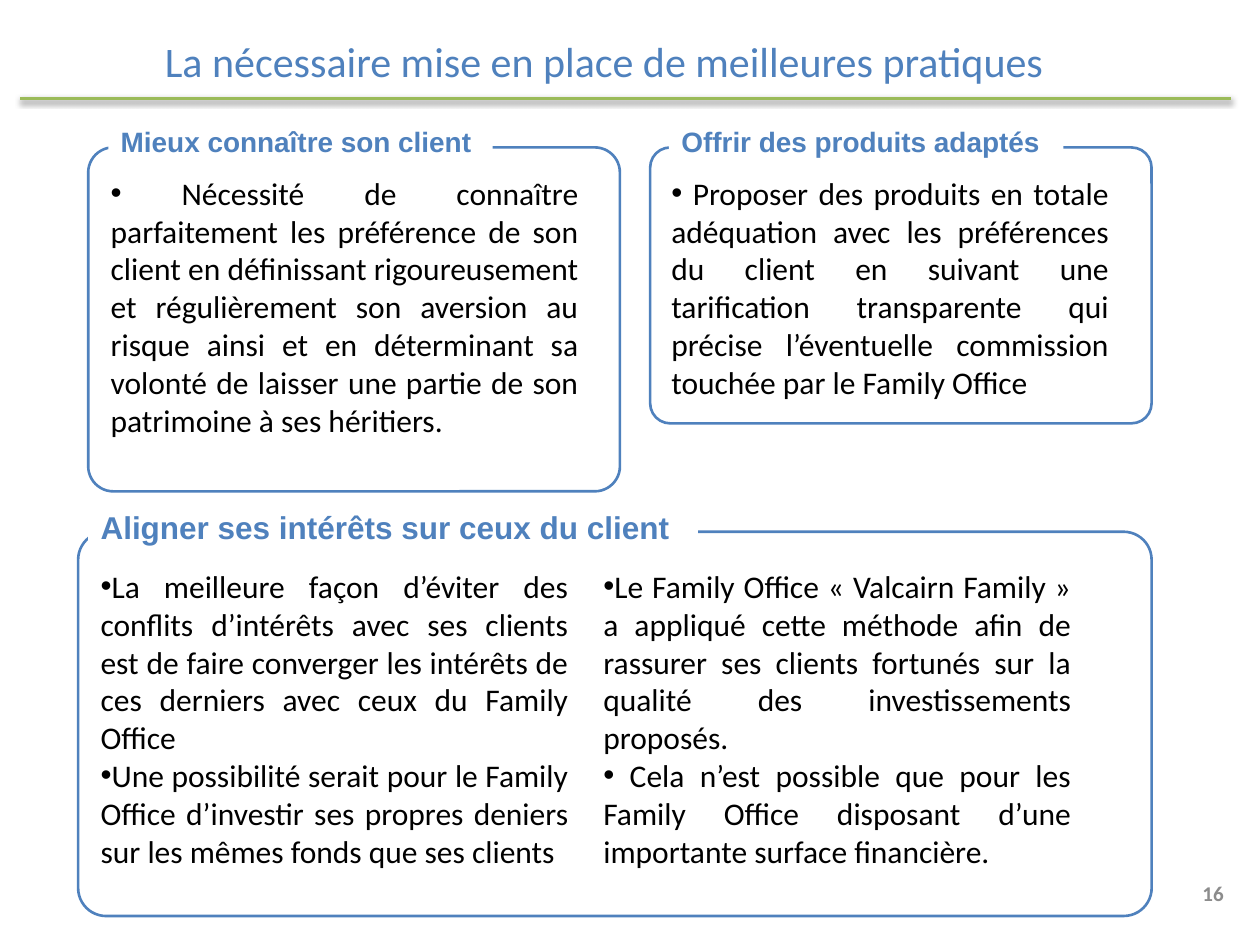
from lxml.etree import SubElement
from pptx import Presentation
from pptx.dml.color import RGBColor
from pptx.enum.shapes import MSO_CONNECTOR, MSO_SHAPE
from pptx.enum.text import MSO_ANCHOR, PP_ALIGN
from pptx.oxml.ns import qn
from pptx.util import Inches, Pt

BLUE, GREEN, GREY, BLACK, WHITE = "4F81BD", "9BBB59", "8C8C8C", "000000", "FFFFFF"

KNOW_CLIENT = [
    " Nécessité de connaître parfaitement les préférence de son client en définissant "
    "rigoureusement et régulièrement son aversion au risque ainsi et en déterminant sa "
    "volonté de laisser une partie de son patrimoine à ses héritiers."
]
ADAPTED_PRODUCTS = [
    " Proposer des produits en totale adéquation avec les préférences du client en suivant "
    "une tarification transparente qui précise l’éventuelle commission touchée par le "
    "Family Office"
]
ALIGN_INTERESTS = [
    "La meilleure façon d’éviter des conflits d’intérêts avec ses clients est de faire "
    "converger les intérêts de ces derniers avec ceux du Family Office",
    "Une possibilité serait pour le Family Office d’investir ses propres deniers sur les "
    "mêmes fonds que ses clients",
]
FAMILY_EXAMPLE = [
    "Le Family Office « Valcairn Family » a appliqué cette méthode afin de rassurer ses "
    "clients fortunés sur la qualité des investissements proposés.",
    " Cela n’est possible que pour les Family Office disposant d’une importante surface "
    "financière.",
]


def color(value):
    return RGBColor.from_string(value)


def inches(box):
    return [Inches(length) for length in box]


def write(shape, lines, size, ink, font="Calibri", bold=False,
          align=PP_ALIGN.LEFT, anchor=MSO_ANCHOR.TOP, wrap=True):
    frame = shape.text_frame
    frame.text = "\n".join(lines)
    frame.word_wrap = wrap
    frame.vertical_anchor = anchor
    for paragraph in frame.paragraphs:
        paragraph.alignment = align
        for run in paragraph.runs:
            run.font.name = font
            run.font.size = Pt(size)
            run.font.bold = bold
            run.font.color.rgb = color(ink)


def add_text(slide, box, lines, size, ink, **style):
    shape = slide.shapes.add_textbox(*inches(box))
    write(shape, lines, size, ink, **style)
    return shape


def add_bullets(slide, box, lines):
    shape = add_text(slide, box, lines, 18, BLACK, align=PP_ALIGN.JUSTIFY)
    for paragraph in shape.text_frame.paragraphs:
        properties = paragraph._p.get_or_add_pPr()
        SubElement(properties, qn("a:buFont"), typeface="Arial")
        SubElement(properties, qn("a:buChar"), char="•")


def add_frame(slide, box):
    frame = slide.shapes.add_shape(MSO_SHAPE.ROUNDED_RECTANGLE, *inches(box))
    frame.adjustments[0] = 0.073
    frame.shadow.inherit = False
    frame.fill.background()
    frame.line.color.rgb = color(BLUE)
    frame.line.width = Pt(1.5)


def add_heading(slide, box, text, size):
    """Add a white label that interrupts the top edge of its frame."""
    heading = slide.shapes.add_shape(MSO_SHAPE.RECTANGLE, *inches(box))
    heading.shadow.inherit = False
    heading.fill.solid()
    heading.fill.fore_color.rgb = color(WHITE)
    heading.line.fill.background()
    write(heading, [text], size, BLUE, font="Arial", bold=True)


def add_title_rule(slide):
    rule = slide.shapes.add_connector(
        MSO_CONNECTOR.STRAIGHT, *inches((0.16, 0.78, 9.77, 0.78)))
    rule.line.color.rgb = color(GREEN)
    rule.line.width = Pt(2)
    effects = SubElement(rule._element.spPr, qn("a:effectLst"))
    shadow = SubElement(effects, qn("a:outerShdw"), blurRad=str(Pt(3.1)),
                        dist=str(Pt(1.6)), dir="5400000", rotWithShape="0")
    shade = SubElement(shadow, qn("a:srgbClr"), val=BLACK)
    SubElement(shade, qn("a:alpha"), val="38000")


def main():
    presentation = Presentation()
    presentation.slide_width, presentation.slide_height = Inches(10), Inches(7.5)
    slide = presentation.slides.add_slide(presentation.slide_layouts[6])

    add_text(slide, (9.14, 6.8, 0.67, 0.57), ["16"], 12, GREY, bold=True,
             align=PP_ALIGN.RIGHT, anchor=MSO_ANCHOR.MIDDLE)
    add_text(slide, (1.17, 0.23, 7.25, 0.5),
             ["La nécessaire mise en place de meilleures pratiques"], 24, BLUE,
             align=PP_ALIGN.CENTER, wrap=False)
    add_title_rule(slide)

    add_frame(slide, (0.7, 1.17, 4.22, 2.73))
    add_heading(slide, (0.86, 0.94, 3.05, 0.67), "Mieux connaître son client", 16)
    add_bullets(slide, (0.78, 1.33, 3.91, 2.52), KNOW_CLIENT)

    add_frame(slide, (0.62, 4.22, 8.52, 3.05))
    add_heading(slide, (0.7, 3.98, 4.84, 0.4), "Aligner ses intérêts sur ceux du client", 18)
    add_bullets(slide, (0.7, 4.45, 3.91, 2.52), ALIGN_INTERESTS)
    add_bullets(slide, (4.69, 4.45, 3.91, 2.52), FAMILY_EXAMPLE)

    add_frame(slide, (5.16, 1.17, 3.98, 2.19))
    add_heading(slide, (5.31, 0.94, 3.13, 0.67), "Offrir des produits adaptés", 16)
    add_bullets(slide, (5.23, 1.33, 3.67, 1.92), ADAPTED_PRODUCTS)

    presentation.save("out.pptx")


if __name__ == "__main__":
    main()
